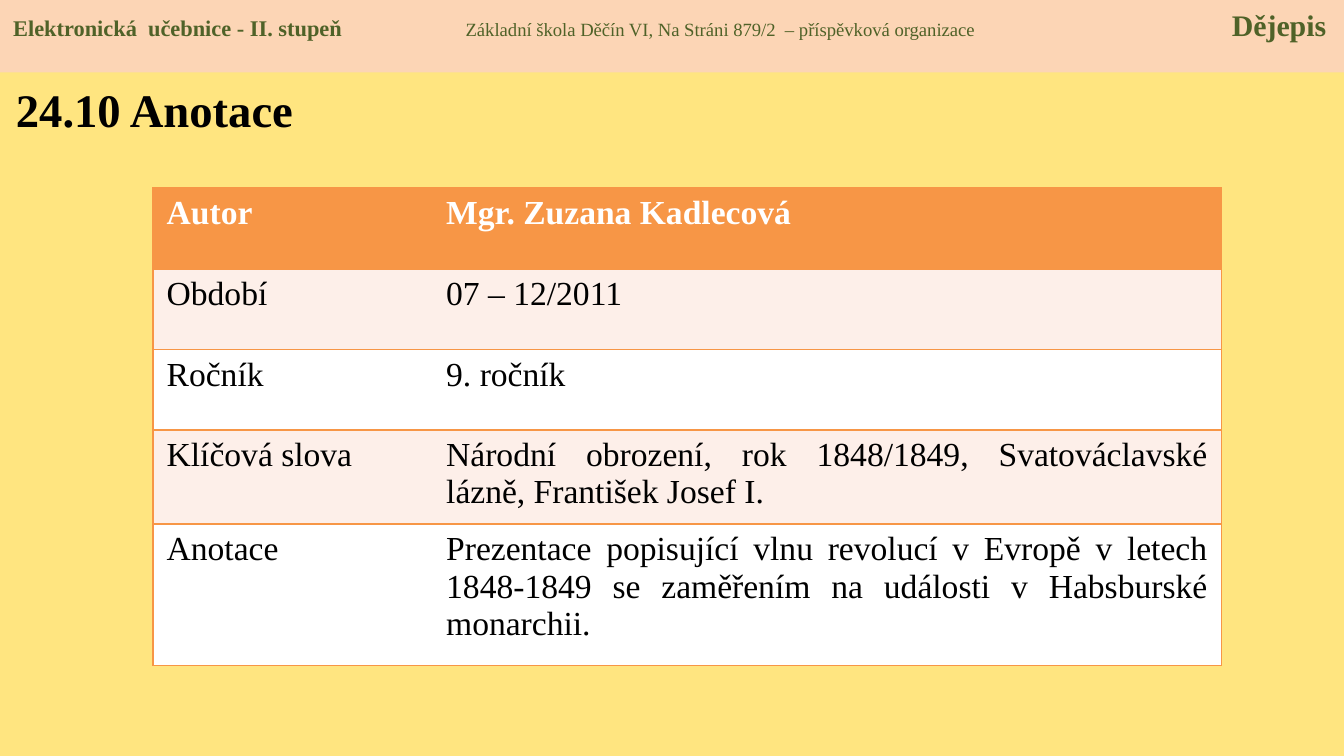
"""Build the annotation slide of a history textbook."""
from dataclasses import dataclass

from lxml import etree
from pptx import Presentation
from pptx import util as u
from pptx.dml.color import RGBColor
from pptx.enum import shapes, text
from pptx.oxml.ns import qn

WIDTH = u.Inches(10)
HEIGHT = WIDTH * 9 // 16
GRID_COLUMNS = 10
FONT = "Times New Roman"
YELLOW = RGBColor(0xFF, 0xE5, 0x80)
PEACH = RGBColor(0xFC, 0xD5, 0xB5)
GREEN = RGBColor(0x4F, 0x62, 0x28)
ORANGE = RGBColor(0xF7, 0x96, 0x46)
BLUSH = RGBColor(0xFD, 0xEF, 0xE9)
WHITE = RGBColor(0xFF, 0xFF, 0xFF)
BLACK = RGBColor(0, 0, 0)
COLUMN_WIDTHS = (2.08, 5.87)


@dataclass(frozen=True)
class Row:
    label: str
    value: str
    height: float = 0.6
    justified: bool = False


ROWS = (
    Row("Autor", "Mgr. Zuzana Kadlecová"),
    Row("Období", "07 – 12/2011"),
    Row("Ročník", "9. ročník"),
    Row("Klíčová slova", "Národní obrození, rok 1848/1849, Svatováclavské lázně, "
        "František Josef I.", 0.7, True),
    Row("Anotace", "Prezentace popisující vlnu revolucí v Evropě v letech 1848-1849 "
        "se zaměřením na události v Habsburské monarchii.", 1.05, True),
)


def grid(units: float) -> int:
    """Return the length of a number of square grid units."""
    return round(WIDTH * units / GRID_COLUMNS)


def write(paragraph, words: str, *, size: float, color: RGBColor,
          bold: bool = False, align=text.PP_ALIGN.LEFT) -> None:
    """Add one formatted run to a paragraph."""
    paragraph.alignment = align
    run = paragraph.add_run()
    run.text = words
    run.font.name = FONT
    run.font.size = u.Pt(size)
    run.font.bold = bold
    run.font.color.rgb = color


def add_tabs(paragraph, stops: dict[str, float]) -> None:
    """Add tab stops, given as alignment and grid units."""
    tabs = etree.SubElement(paragraph._p.get_or_add_pPr(), qn("a:tabLst"))
    for align, units in stops.items():
        etree.SubElement(tabs, qn("a:tab"), pos=str(grid(units)), algn=align)


def add_header(slide) -> None:
    """Draw the band with textbook, school and subject."""
    band = slide.shapes.add_shape(
        shapes.MSO_SHAPE.RECTANGLE, 0, 0, WIDTH, grid(0.54))
    band.shadow.inherit = False
    band.fill.solid()
    band.fill.fore_color.rgb = PEACH
    band.line.fill.background()
    band.text_frame.vertical_anchor = text.MSO_ANCHOR.TOP
    paragraph = band.text_frame.paragraphs[0]
    add_tabs(paragraph, {"ctr": 5.26, "r": 9.77})
    write(paragraph, "Elektronická  učebnice - II. stupeň\t",
          size=12, color=GREEN, bold=True)
    write(paragraph, "Základní škola Děčín VI, Na Stráni 879/2  – příspěvková organizace\t",
          size=10, color=GREEN)
    write(paragraph, "Dějepis", size=16, color=GREEN, bold=True)


def add_title(slide) -> None:
    """Draw the slide heading."""
    box = slide.shapes.add_textbox(grid(0.02), grid(0.55), grid(4.19), grid(0.65))
    box.text_frame.word_wrap = True
    write(box.text_frame.paragraphs[0], "24.10 Anotace", size=25, color=BLACK, bold=True)


def set_borders(cell, visible: str) -> None:
    """Give a cell orange lines on the visible sides and none elsewhere."""
    properties = cell._tc.get_or_add_tcPr()
    for side in "LRTB":
        line = etree.SubElement(properties, qn(f"a:ln{side}"), w=str(u.Pt(1)))
        if side in visible:
            fill = etree.SubElement(line, qn("a:solidFill"))
            etree.SubElement(fill, qn("a:srgbClr"), val=str(ORANGE))
        else:
            etree.SubElement(line, qn("a:noFill"))


def add_annotation_table(slide) -> None:
    """Draw the table of labels and values."""
    table = slide.shapes.add_table(
        len(ROWS), len(COLUMN_WIDTHS), grid(1.14), grid(1.4),
        grid(sum(COLUMN_WIDTHS)), grid(sum(row.height for row in ROWS))).table
    for column, width in zip(table.columns, COLUMN_WIDTHS):
        column.width = grid(width)
    for index, row in enumerate(ROWS):
        table.rows[index].height = grid(row.height)
        heading = index == 0
        background = ORANGE if heading else (WHITE, BLUSH)[index % 2]
        value_align = text.PP_ALIGN.JUSTIFY if row.justified else text.PP_ALIGN.LEFT
        contents = ((row.label, text.PP_ALIGN.LEFT, "LTB"), (row.value, value_align, "RTB"))
        for cell, (words, align, sides) in zip(table.rows[index].cells, contents):
            set_borders(cell, sides)
            cell.fill.solid()
            cell.fill.fore_color.rgb = background
            write(cell.text_frame.paragraphs[0], words, size=18, align=align,
                  color=WHITE if heading else BLACK, bold=heading)


def main() -> None:
    """Build and save the presentation."""
    presentation = Presentation()
    presentation.slide_width, presentation.slide_height = WIDTH, HEIGHT
    slide = presentation.slides.add_slide(presentation.slide_layouts[6])
    slide.background.fill.solid()
    slide.background.fill.fore_color.rgb = YELLOW
    add_header(slide)
    add_title(slide)
    add_annotation_table(slide)
    presentation.save("out.pptx")


if __name__ == "__main__":
    main()
